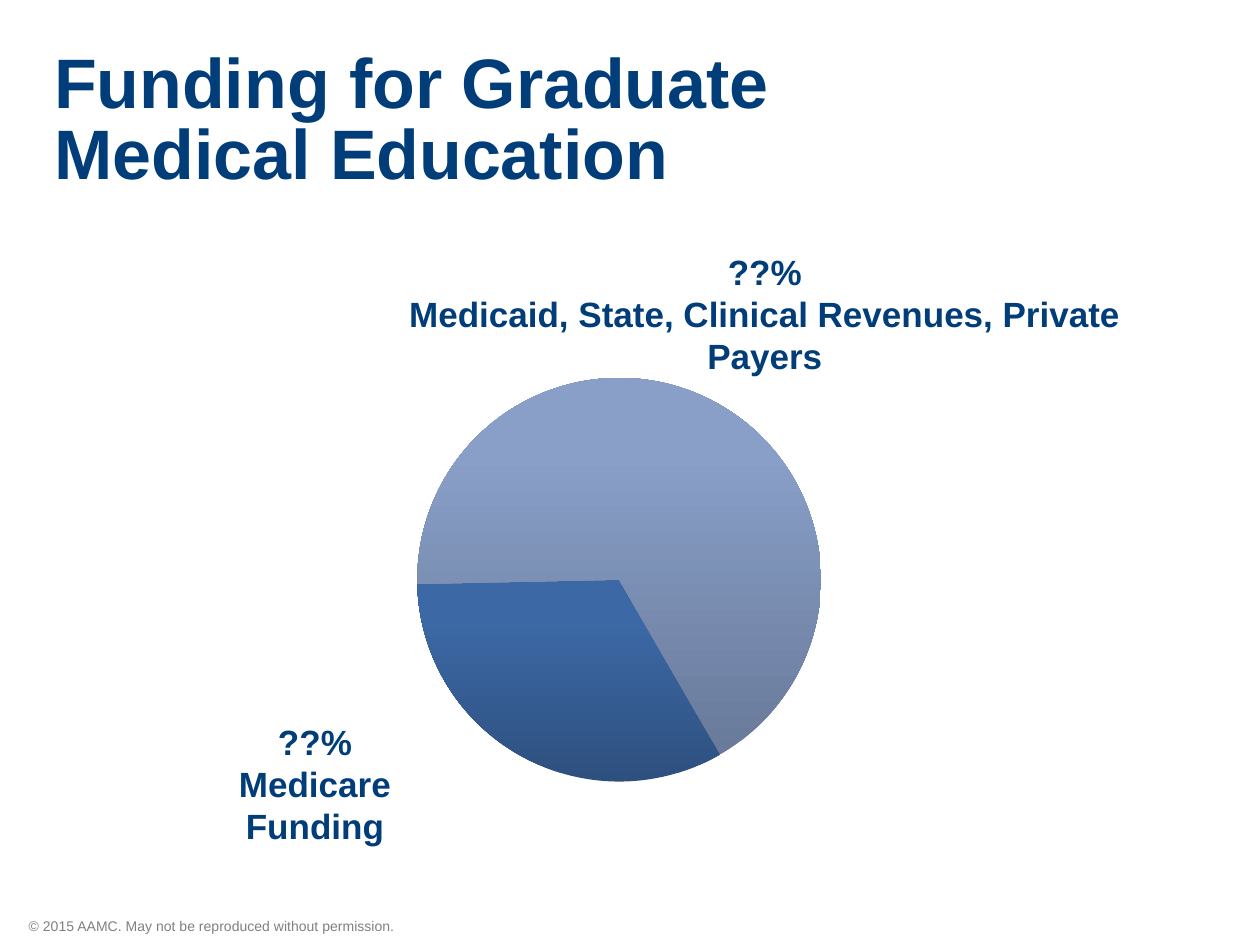
from copy import deepcopy
from dataclasses import dataclass

from lxml.etree import SubElement
from pptx import Presentation
from pptx.chart.data import CategoryChartData
from pptx.dml.color import RGBColor
from pptx.enum.chart import XL_CHART_TYPE
from pptx.enum.text import MSO_ANCHOR, PP_ALIGN
from pptx.oxml.ns import qn
from pptx.util import Inches, Pt


@dataclass(frozen=True)
class Theme:
    font: str = "Arial"
    navy: str = "013D79"
    grey: str = "808080"
    medicare: tuple = ((0, "2E507F"), (0.8, "3C68A5"), (1, "3A68A8"))
    other_payers: tuple = ((0, "697A9A"), (0.8, "899FC8"), (1, "889FCB"))
    title_size: int = 40
    label_size: int = 20
    chart_size: int = 18
    footer_size: int = 8


def write_text(frame, text, font, size, color, bold=False,
               align=PP_ALIGN.LEFT, line_spacing=None):
    for index, line in enumerate(text.split("\n")):
        paragraph = frame.add_paragraph() if index else frame.paragraphs[0]
        paragraph.text = line
        paragraph.alignment = align
        if line_spacing:
            paragraph.line_spacing = line_spacing
        for run in paragraph.runs:
            run.font.name = font
            run.font.size = Pt(size)
            run.font.bold = bold
            run.font.color.rgb = RGBColor.from_string(color)


class SlideBuilder:
    def __init__(self, slide, theme):
        self.slide = slide
        self.theme = theme

    def text(self, box, text, size, color=None, anchor=MSO_ANCHOR.TOP,
             margin=None, **text_format):
        shape = self.slide.shapes.add_textbox(*map(Inches, box))
        frame = shape.text_frame
        frame.word_wrap = True
        frame.vertical_anchor = anchor
        if margin is not None:
            frame.margin_left = frame.margin_right = Inches(margin)
            frame.margin_top = frame.margin_bottom = Inches(margin)
        write_text(frame, text, font=self.theme.font, size=size,
                   color=color or self.theme.navy, **text_format)

    def label(self, box, text):
        self.text(box, text, self.theme.label_size, bold=True,
                  align=PP_ALIGN.CENTER)

    def pie(self, box, values, gradients, start_angle, plot_box):
        data = CategoryChartData()
        data.categories = [str(number + 1) for number in range(len(values))]
        data.add_series("Series 1", values)
        chart = self.slide.shapes.add_chart(
            XL_CHART_TYPE.PIE, *map(Inches, box), data).chart
        chart.has_legend = False
        chart.has_title = False
        chart.font.name = self.theme.font
        chart.font.size = Pt(self.theme.chart_size)
        chart.font.color.rgb = RGBColor.from_string(self.theme.navy)
        for index, stops in enumerate(gradients):
            self.slice_gradient(chart, index, stops)
        self.place_plot(chart, start_angle, plot_box)

    def slice_gradient(self, chart, index, stops):
        point = chart.plots[0].series[0].points[index]
        point.format.line.fill.background()
        fill = point.format.fill
        fill.gradient()
        fill.gradient_angle = 90
        stop_list = list(chart._chartSpace.iter(qn("a:gsLst")))[-1]
        stop_list.append(deepcopy(stop_list[0]))
        for stop, (position, color) in zip(fill.gradient_stops, stops):
            stop.position = position
            stop.color.rgb = RGBColor.from_string(color)

    def place_plot(self, chart, start_angle, plot_box):
        plot_area = chart._chartSpace.find(".//" + qn("c:plotArea"))
        pie = plot_area.find(qn("c:pieChart"))
        angle = pie.find(qn("c:firstSliceAng"))
        if angle is None:
            angle = SubElement(pie, qn("c:firstSliceAng"))
        angle.set("val", str(start_angle))
        layout = plot_area.find(qn("c:layout"))
        if layout is None:
            layout = SubElement(plot_area, qn("c:layout"))
            plot_area.insert(0, layout)
        manual = SubElement(layout, qn("c:manualLayout"))
        settings = [("layoutTarget", "inner"), ("xMode", "edge"), ("yMode", "edge")]
        settings += zip("xywh", plot_box)
        for name, value in settings:
            SubElement(manual, qn("c:" + name)).set("val", str(value))


def main():
    theme = Theme()
    presentation = Presentation()
    presentation.slide_width = Inches(10)
    presentation.slide_height = Inches(7.5)
    slide = presentation.slides.add_slide(presentation.slide_layouts[6])
    builder = SlideBuilder(slide, theme)

    builder.text((0.13, 7.23, 6.17, 0.23),
                 "© 2015 AAMC. May not be reproduced without permission.",
                 theme.footer_size, color=theme.grey)
    builder.text((0.43, 0.63, 9.05, 0.91),
                 "Funding for Graduate\vMedical Education", theme.title_size,
                 anchor=MSO_ANCHOR.BOTTOM, margin=0, bold=True, line_spacing=0.85)
    builder.pie((1.47, 0.7, 8.01, 6.67), (33, 67),
                (theme.medicare, theme.other_payers),
                start_angle=150, plot_box=(0.23, 0.34, 0.4, 0.49))
    builder.label((1.21, 5.67, 2.58, 1.1), "??%\nMedicare\vFunding")
    builder.label((2.66, 1.94, 6.82, 1.11),
                  "??%\nMedicaid, State, Clinical Revenues, Private Payers")
    presentation.save("out.pptx")


if __name__ == "__main__":
    main()
